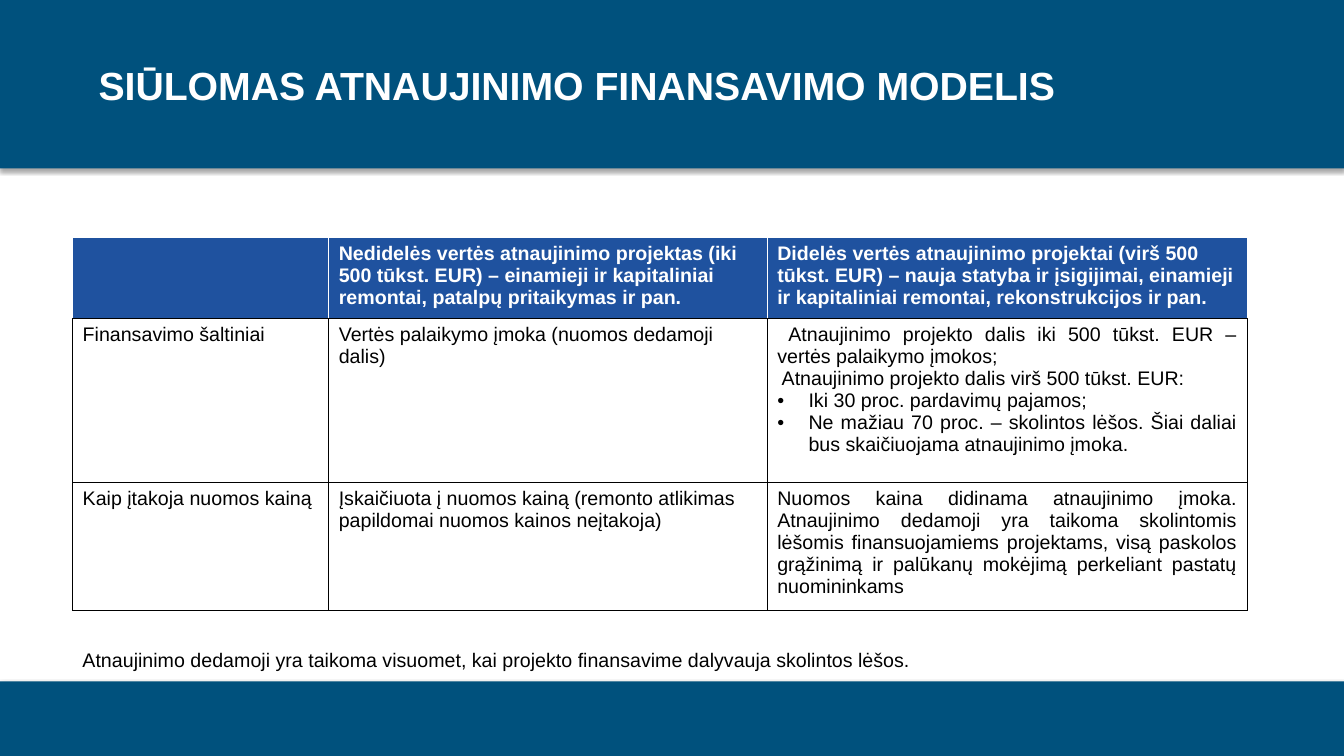
import pptx
import pptx.dml.color
import pptx.enum.shapes
import pptx.enum.text
import pptx.oxml
import pptx.oxml.ns
import pptx.util
from pptx.util import Inches

FONT = "Arial"
BAND_BLUE = "00517D"
HEADER_BLUE = "1F529F"
WHITE = "FFFFFF"
BLACK = "000000"
NAMESPACE = pptx.oxml.ns.nsdecls("a")
JUSTIFY = pptx.enum.text.PP_ALIGN.JUSTIFY

COLUMN_WIDTHS = [2.54, 4.35, 4.76]
ROW_HEIGHTS = [0.76, 1.63, 1.19]
BULLET = "• "
ROWS = [
    [
        "",
        "Nedidelės vertės atnaujinimo projektas (iki 500 tūkst. EUR) – einamieji ir "
        "kapitaliniai remontai, patalpų pritaikymas ir pan.",
        "Didelės vertės atnaujinimo projektai (virš 500 tūkst. EUR) – nauja statyba ir "
        "įsigijimai, einamieji ir kapitaliniai remontai, rekonstrukcijos ir pan.",
    ],
    [
        "Finansavimo šaltiniai",
        "Vertės palaikymo įmoka (nuomos dedamoji dalis)",
        " Atnaujinimo projekto dalis iki 500 tūkst. EUR – vertės palaikymo įmokos;\n"
        " Atnaujinimo projekto dalis virš 500 tūkst. EUR:\n"
        "• Iki 30 proc. pardavimų pajamos;\n"
        "• Ne mažiau 70 proc. – skolintos lėšos. Šiai daliai bus skaičiuojama "
        "atnaujinimo įmoka.",
    ],
    [
        "Kaip įtakoja nuomos kainą",
        "Įskaičiuota į nuomos kainą (remonto atlikimas papildomai nuomos kainos neįtakoja)",
        "Nuomos kaina didinama atnaujinimo įmoka. Atnaujinimo dedamoji yra taikoma "
        "skolintomis lėšomis finansuojamiems projektams, visą paskolos grąžinimą ir "
        "palūkanų mokėjimą perkeliant pastatų nuomininkams",
    ],
]


def rgb(color):
    return pptx.dml.color.RGBColor.from_string(color)


def set_font(paragraph, size, color, bold=False):
    font = paragraph.font
    font.name = FONT
    font.size = pptx.util.Pt(size)
    font.bold = bold
    font.color.rgb = rgb(color)


def add_band(slide, top, height):
    """Add a full-width blue band with a soft shadow below it."""
    band = slide.shapes.add_shape(
        pptx.enum.shapes.MSO_SHAPE.RECTANGLE,
        0, Inches(top), Inches(13.33), Inches(height),
    )
    band.fill.solid()
    band.fill.fore_color.rgb = rgb(BAND_BLUE)
    band.line.fill.background()
    band.shadow.inherit = False
    effects = band.element.spPr.find(pptx.oxml.ns.qn("a:effectLst"))
    effects.append(pptx.oxml.parse_xml(
        f'<a:outerShdw {NAMESPACE} blurRad="39370" dist="22860" dir="5400000" '
        f'rotWithShape="0"><a:srgbClr val="{BLACK}"><a:alpha val="35000"/></a:srgbClr>'
        '</a:outerShdw>'
    ))


def add_text(slide, text, left, top, width, height, size, color, bold=False):
    box = slide.shapes.add_textbox(
        Inches(left), Inches(top), Inches(width), Inches(height)
    )
    box.text_frame.word_wrap = True
    paragraph = box.text_frame.paragraphs[0]
    paragraph.text = text
    set_font(paragraph, size, color, bold)
    return box.text_frame


def set_borders(cell, side_colors):
    properties = cell._tc.get_or_add_tcPr()
    for side, color in zip("LRTB", side_colors):
        properties.append(pptx.oxml.parse_xml(
            f'<a:ln{side} {NAMESPACE} w="12700"><a:solidFill><a:srgbClr val="{color}"/>'
            f'</a:solidFill></a:ln{side}>'
        ))


def set_bullet(paragraph):
    properties = paragraph._p.get_or_add_pPr()
    indent = Inches(0.31)
    properties.set("marL", str(indent))
    properties.set("indent", str(-indent))
    properties.append(pptx.oxml.parse_xml(f'<a:buFont {NAMESPACE} typeface="{FONT}"/>'))
    properties.append(pptx.oxml.parse_xml(f'<a:buChar {NAMESPACE} char="•"/>'))


def fill_cell(cell, text, is_header, justified):
    set_borders(cell, [WHITE, WHITE, WHITE, BLACK] if is_header else [BLACK] * 4)
    if is_header:
        cell.fill.solid()
        cell.fill.fore_color.rgb = rgb(HEADER_BLUE)
    else:
        cell.fill.background()
    cell.text = text
    for paragraph in cell.text_frame.paragraphs:
        if paragraph.text.startswith(BULLET):
            paragraph.text = paragraph.text.removeprefix(BULLET)
            set_bullet(paragraph)
        if justified:
            paragraph.alignment = JUSTIFY
        set_font(paragraph, 14, WHITE if is_header else BLACK, is_header)


def add_financing_table(slide):
    table = slide.shapes.add_table(
        len(ROWS), len(COLUMN_WIDTHS), Inches(0.72), Inches(2.36),
        Inches(sum(COLUMN_WIDTHS)), Inches(sum(ROW_HEIGHTS)),
    ).table
    table.horz_banding = False
    for column, width in zip(table.columns, COLUMN_WIDTHS):
        column.width = Inches(width)
    for row, height in zip(table.rows, ROW_HEIGHTS):
        row.height = Inches(height)
    last_column = len(COLUMN_WIDTHS) - 1
    for row_index, texts in enumerate(ROWS):
        is_header = row_index == 0
        for column_index, text in enumerate(texts):
            justified = not is_header and column_index == last_column
            fill_cell(table.cell(row_index, column_index), text, is_header, justified)


def main():
    presentation = pptx.Presentation()
    presentation.slide_width = Inches(13.33)
    presentation.slide_height = Inches(7.5)
    slide = presentation.slides.add_slide(presentation.slide_layouts[6])

    add_band(slide, 0, 1.67)
    add_band(slide, 6.76, 0.74)
    title = add_text(
        slide, "SIŪLOMAS ATNAUJINIMO FINANSAVIMO MODELIS",
        0.88, 0.36, 11.84, 0.77, 28, WHITE, bold=True,
    )
    title.vertical_anchor = pptx.enum.text.MSO_ANCHOR.BOTTOM
    title.paragraphs[0].line_spacing = 0.9
    add_financing_table(slide)
    add_text(
        slide,
        "Atnaujinimo dedamoji yra taikoma visuomet, kai projekto finansavime dalyvauja "
        "skolintos lėšos.",
        0.72, 6.38, 9.14, 0.34, 14, BLACK,
    )
    presentation.save("out.pptx")


if __name__ == "__main__":
    main()
